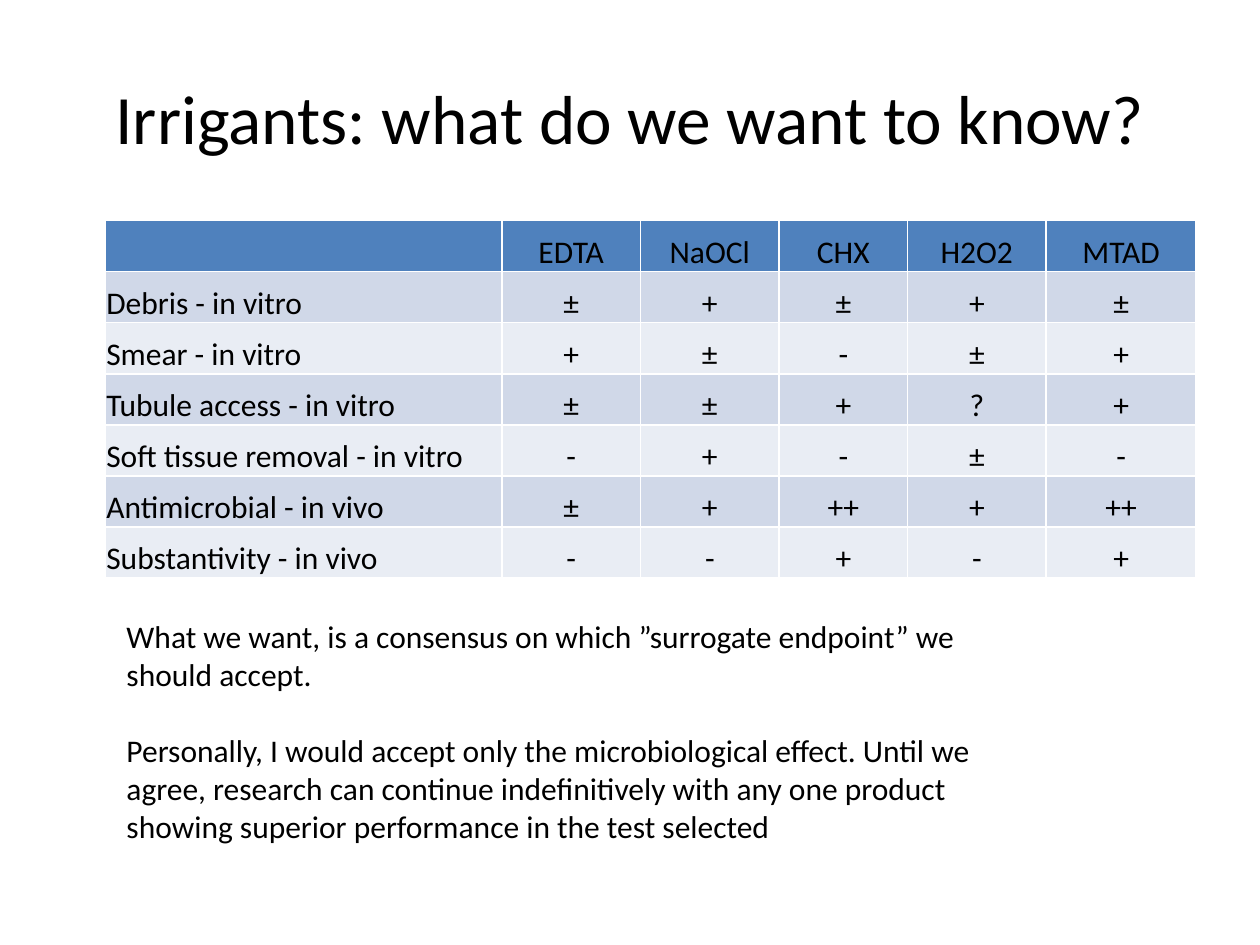
from pptx import Presentation
from pptx.dml.color import RGBColor
from pptx.enum.text import MSO_ANCHOR, MSO_AUTO_SIZE, PP_ALIGN
from pptx.util import Pt

LEFT, CENTER = PP_ALIGN.LEFT, PP_ALIGN.CENTER
MIDDLE, BOTTOM = MSO_ANCHOR.MIDDLE, MSO_ANCHOR.BOTTOM
NO_FIT, GROW = MSO_AUTO_SIZE.NONE, MSO_AUTO_SIZE.SHAPE_TO_FIT_TEXT

BLACK = RGBColor(0x00, 0x00, 0x00)
HEADER_BLUE = RGBColor(0x4F, 0x81, 0xBD)
BANDS = RGBColor(0xE9, 0xED, 0xF4), RGBColor(0xD0, 0xD8, 0xE8)

IRRIGANT_EFFECTS = [
    ["", "EDTA", "NaOCl", "CHX", "H2O2", "MTAD"],
    ["Debris - in vitro", "±", "+", "±", "+", "±"],
    ["Smear - in vitro", "+", "±", "-", "±", "+"],
    ["Tubule access - in vitro", "±", "±", "+", "?", "+"],
    ["Soft tissue removal - in vitro", "-", "+", "-", "±", "-"],
    ["Antimicrobial - in vivo", "±", "+", "++", "+", "++"],
    ["Substantivity - in vivo", "-", "-", "+", "-", "+"],
]
COLUMN_WIDTHS = [226.8, 79.2, 79.2, 73.4, 79.2, 85.7]
ROW_HEIGHT = 29.2

CONCLUSIONS = [
    "What we want, is a consensus on which ”surrogate endpoint” we should accept.",
    "Personally, I would accept only the microbiological effect. Until we agree, "
    "research can continue indefinitively with any one product showing superior "
    "performance in the test selected",
]


class SlideBuilder:
    """Adds consistently styled elements to one slide."""

    def __init__(self, slide, font="Calibri", size=18):
        self.slide = slide
        self.font = font
        self.size = size

    def style(self, paragraph, align=LEFT, size=None):
        paragraph.alignment = align
        font = paragraph.font
        font.name, font.size, font.bold = self.font, Pt(size or self.size), False
        font.color.rgb = BLACK

    def title(self, text, left, top, width, height, size):
        heading = self.slide.shapes.title
        heading.left, heading.top = Pt(left), Pt(top)
        heading.width, heading.height = Pt(width), Pt(height)
        frame = heading.text_frame
        frame.text = text
        frame.auto_size, frame.vertical_anchor = NO_FIT, MIDDLE
        self.style(frame.paragraphs[0], CENTER, size)

    def table(self, rows, left, top, widths, row_height):
        grid = self.slide.shapes.add_table(
            len(rows), len(widths), Pt(left), Pt(top),
            Pt(sum(widths)), Pt(row_height * len(rows))).table
        for column, width in zip(grid.columns, widths):
            column.width = Pt(width)
        for r, values in enumerate(rows):
            grid.rows[r].height = Pt(row_height)
            for c, value in enumerate(values):
                fill = BANDS[r % 2] if r else HEADER_BLUE
                self.cell(grid.cell(r, c), value, fill, CENTER if c else LEFT)

    def cell(self, cell, value, fill, align):
        cell.text = value
        cell.vertical_anchor = BOTTOM
        cell.margin_left = cell.margin_right = cell.margin_top = Pt(0.75)
        cell.margin_bottom = Pt(0)
        cell.fill.solid()
        cell.fill.fore_color.rgb = fill
        self.style(cell.text_frame.paragraphs[0], align)

    def text(self, paragraphs, left, top, width, height, gap):
        frame = self.slide.shapes.add_textbox(
            Pt(left), Pt(top), Pt(width), Pt(height)).text_frame
        frame.word_wrap, frame.auto_size = True, GROW
        frame.text = "\n".join(paragraphs)
        for index, paragraph in enumerate(frame.paragraphs):
            if index:
                paragraph.space_before = Pt(gap)
            self.style(paragraph)


def main():
    deck = Presentation()
    deck.slide_width, deck.slide_height = Pt(720), Pt(540)
    builder = SlideBuilder(deck.slides.add_slide(deck.slide_layouts[5]))
    builder.title("Irrigants: what do we want to know?", 36, 21.6, 648, 90, 39.6)
    builder.table(IRRIGANT_EFFECTS, 60, 126, COLUMN_WIDTHS, ROW_HEIGHT)
    builder.text(CONCLUSIONS, 65.2, 349.2, 507.6, 138.2, 22)
    deck.save("out.pptx")


if __name__ == "__main__":
    main()
